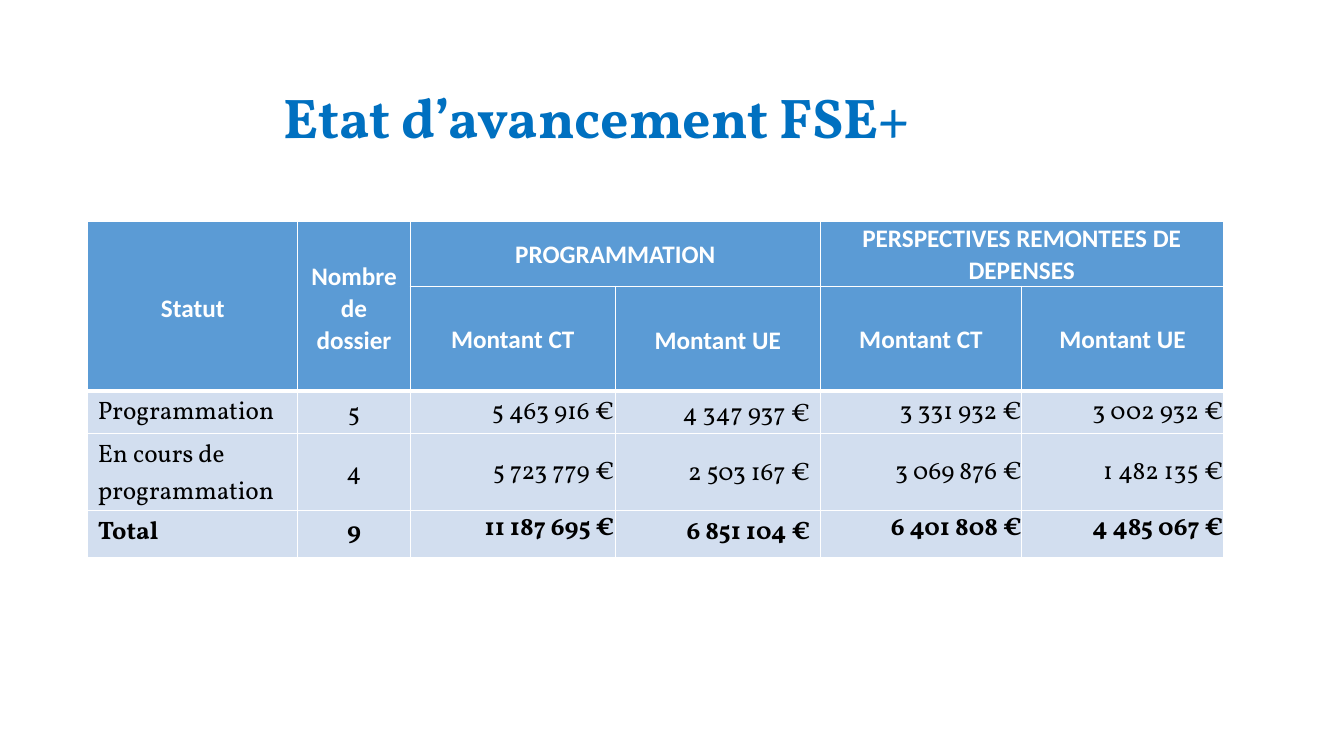
from lxml import etree
from pptx import Presentation
from pptx.dml.color import RGBColor
from pptx.enum.text import MSO_ANCHOR, PP_ALIGN
from pptx.oxml.ns import qn
from pptx.util import Inches, Pt

LEFT, CENTER, RIGHT = PP_ALIGN.LEFT, PP_ALIGN.CENTER, PP_ALIGN.RIGHT
TOP, MIDDLE = MSO_ANCHOR.TOP, MSO_ANCHOR.MIDDLE

TITLE_BLUE = RGBColor(0x00, 0x70, 0xC0)
HEADER_BLUE = RGBColor(0x5B, 0x9B, 0xD5)
BODY_BLUE = RGBColor(0xD2, 0xDE, 0xEF)
WHITE = RGBColor(0xFF, 0xFF, 0xFF)
BLACK = RGBColor(0x00, 0x00, 0x00)

HEADER_ROWS = 2
COL_WIDTHS = [25, 13.4, 24.4, 24.4, 24, 24]
ROW_HEIGHTS = [6.2, 10.4, 4.2, 7.2, 4.7]
SIDE_INSETS = [0.1, 0.1, 0.01, 0.1, 0, 0]
BODY_ALIGN = [LEFT, CENTER] + [RIGHT] * 4
SPANS = [(0, 0, 1, 0), (0, 1, 1, 1), (0, 2, 0, 3), (0, 4, 0, 5)]
CONTENT = [
    ["Statut", "Nombre de dossier", "PROGRAMMATION", "",
     "PERSPECTIVES REMONTEES DE DEPENSES", ""],
    ["", "", "Montant CT", "Montant UE", "Montant CT", "Montant UE"],
    ["Programmation", "5", "5 463 916 €", "4 347 937 €",
     "3 331 932 €", "3 002 932 €"],
    ["En cours de programmation", "4", "5 723 779 €", "2 503 167 €",
     "3 069 876 €", "1 482 135 €"],
    ["Total", "9", "11 187 695 €", "6 851 104 €",
     "6 401 808 €", "4 485 067 €"],
]


class Deck:
    """Current slide on a grid of 160 columns and 75 rows, with its style."""
    title_font, header_font = "Vollkorn", "Calibri"
    title_size, table_size = 40, 18
    line_spacing = 1.05

    def __init__(self):
        self.prs = Presentation()
        self.prs.slide_width, self.prs.slide_height = Inches(13.33), Inches(7.5)
        self.s = self.prs.slides.add_slide(self.prs.slide_layouts[5])

    def x(self, cols):
        return int(self.prs.slide_width * cols / 160)

    def y(self, rows):
        return int(self.prs.slide_height * rows / 75)

    def run(self, p, text, font, size, color, bold):
        r = p.add_run()
        r.text = text
        r.font.name, r.font.size = font, Pt(size)
        r.font.color.rgb, r.font.bold = color, bold

    def title(self, text, left, top, width, height):
        sp = self.s.shapes.title
        sp.left, sp.top = self.x(left), self.y(top)
        sp.width, sp.height = self.x(width), self.y(height)
        tf = sp.text_frame
        tf.word_wrap, tf.vertical_anchor = True, MIDDLE
        p = tf.paragraphs[0]
        p.alignment = CENTER
        self.run(p, text, self.title_font, self.title_size, TITLE_BLUE, True)

    def borders(self, cell, **widths):
        """Draw white sides; the lines must come before the fill in tcPr."""
        tcPr = cell._tc.get_or_add_tcPr()
        for i, side in enumerate("LRTB"):
            ln = etree.Element(qn("a:ln" + side), w=str(Pt(widths.get(side, 1))))
            fill = etree.SubElement(ln, qn("a:solidFill"))
            etree.SubElement(fill, qn("a:srgbClr"), val=str(WHITE))
            tcPr.insert(i, ln)

    def cell(self, cell, row, col, text):
        header, total = row < HEADER_ROWS, row == len(CONTENT) - 1
        inset = SIDE_INSETS[col]
        cell.margin_left = cell.margin_right = Inches(inset)
        cell.margin_top = Inches(0.03 if inset == 0.1 else 0)
        cell.margin_bottom = 0
        top_anchored = total or (not header and col == 0)
        cell.vertical_anchor = TOP if top_anchored else MIDDLE
        cell.fill.solid()
        cell.fill.fore_color.rgb = HEADER_BLUE if header else BODY_BLUE
        if row == HEADER_ROWS:
            self.borders(cell, T=3)
        elif row == HEADER_ROWS - 1 or (cell.is_merge_origin and cell.span_height > 1):
            self.borders(cell, B=3)
        else:
            self.borders(cell)
        p = cell.text_frame.paragraphs[0]
        p.alignment = CENTER if header else BODY_ALIGN[col]
        p.line_spacing = self.line_spacing
        if text:
            self.run(p, text, self.header_font if header else self.title_font,
                     self.table_size, WHITE if header else BLACK, header or total)
        else:
            p.font.size = Pt(self.table_size)

    def table(self, left, top):
        tbl = self.s.shapes.add_table(
            len(ROW_HEIGHTS), len(COL_WIDTHS), self.x(left), self.y(top),
            self.x(sum(COL_WIDTHS)), self.y(sum(ROW_HEIGHTS))).table
        for column, width in zip(tbl.columns, COL_WIDTHS):
            column.width = self.x(width)
        for row, height in zip(tbl.rows, ROW_HEIGHTS):
            row.height = self.y(height)
        for r0, c0, r1, c1 in SPANS:
            tbl.cell(r0, c0).merge(tbl.cell(r1, c1))
        for i, texts in enumerate(CONTENT):
            for j, text in enumerate(texts):
                self.cell(tbl.cell(i, j), i, j, text)


def main():
    deck = Deck()
    deck.title("Etat d’avancement FSE+", 9.5, 7.7, 123, 7.7)
    deck.table(10.45, 22)
    deck.prs.save("out.pptx")


if __name__ == "__main__":
    main()
